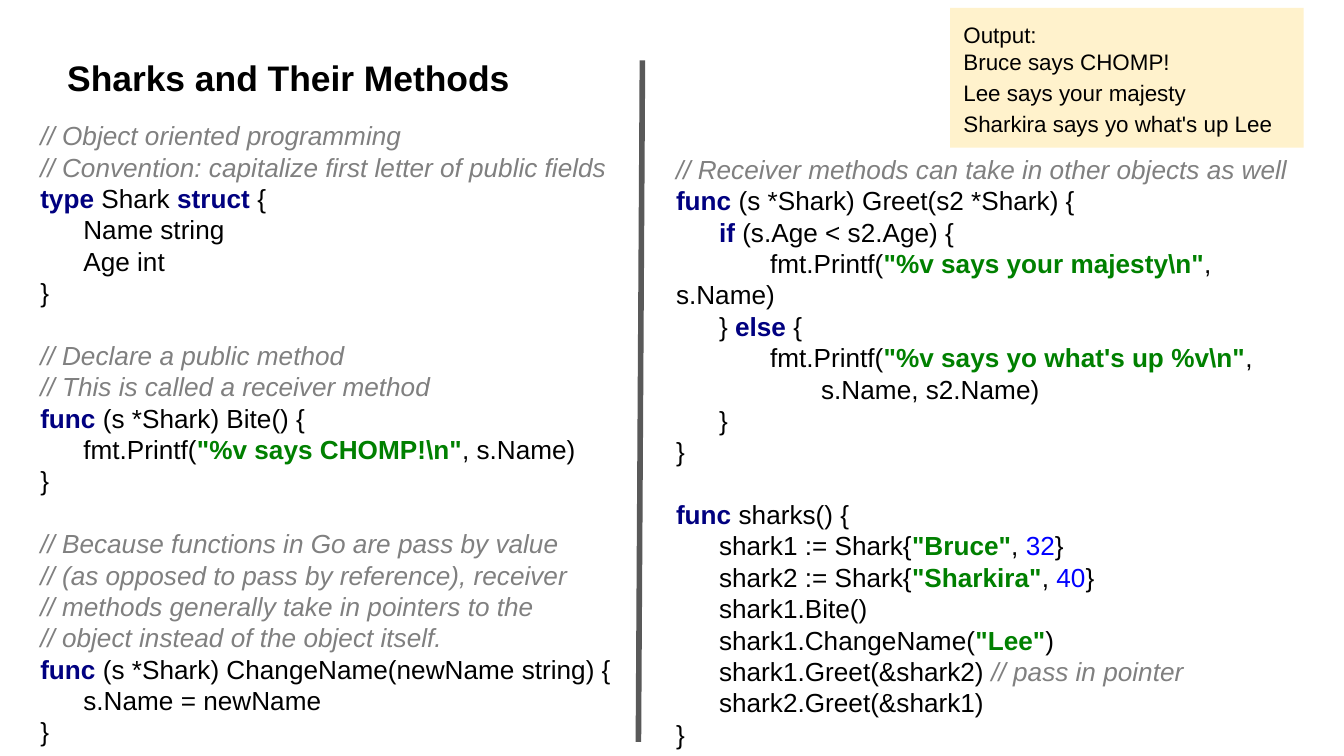
"""Build a slide that explains receiver methods on a Shark struct in Go."""

from typing import NamedTuple

from lxml import etree
from pptx import Presentation
from pptx.dml.color import RGBColor
from pptx.enum.shapes import MSO_CONNECTOR, MSO_SHAPE
from pptx.enum.text import MSO_ANCHOR, MSO_AUTO_SIZE, PP_ALIGN
from pptx.oxml.ns import qn
from pptx.util import Inches, Pt

STRAIGHT = MSO_CONNECTOR.STRAIGHT
RECTANGLE = MSO_SHAPE.RECTANGLE
TOP = MSO_ANCHOR.TOP
NO_AUTOFIT = MSO_AUTO_SIZE.NONE
LEFT = PP_ALIGN.LEFT

COLORS = {
    "text": "000000",
    "comment": "808080",
    "keyword": "000080",
    "string": "008000",
    "number": "0000FF",
    "divider": "595959",
    "output": "FFF2CC",
}
BOLD_STYLES = {"keyword", "string", "title"}
INDENTS = (0, 0.32, 0.7, 1.08)
SLIDE_WIDTH = 10
SLIDE_HEIGHT = SLIDE_WIDTH * 9 / 16
CODE_SIZE = 14
GAP = 16.8


class Run(NamedTuple):
    """A piece of text in one style."""

    text: str
    style: str = "text"


class Line(NamedTuple):
    """One paragraph with its indent depth and the space around it."""

    runs: list[Run]
    depth: int = 0
    space_before: float = 0
    line_spacing: float = 1.0


class Box(NamedTuple):
    """A position and size in inches."""

    left: float
    top: float
    width: float
    height: float


def plain(text: str, depth: int = 0, **spacing: float) -> Line:
    """Return a line of unstyled text."""
    return Line([Run(text)], depth, **spacing)


def comment(text: str, space_before: float = 0) -> Line:
    """Return a comment line."""
    return Line([Run(f"// {text}", "comment")], 0, space_before)


def function(signature: str, space_before: float = 0) -> Line:
    """Return the opening line of a function."""
    return Line([Run("func ", "keyword"), Run(signature)], 0, space_before)


def call(before: str, quoted: str, after: str, depth: int = 1) -> Line:
    """Return a code line with a quoted string in it."""
    return Line([Run(before), Run(f'"{quoted}"', "string"), Run(after)], depth)


def shark(variable: str, name: str, age: int) -> Line:
    """Return the line that creates one shark."""
    start = call(f"{variable} := Shark{{", name, ", ")
    return Line(start.runs + [Run(str(age), "number"), Run("}")], 1)


LEFT_CODE = [
    comment("Object oriented programming"),
    comment("Convention: capitalize first letter of public fields"),
    Line([Run("type ", "keyword"), Run("Shark "), Run("struct ", "keyword"), Run("{")]),
    plain("Name string", 1),
    plain("Age int", 1),
    plain("}"),
    comment("Declare a public method", GAP),
    comment("This is called a receiver method"),
    function("(s *Shark) Bite() {"),
    call("fmt.Printf(", "%v says CHOMP!\\n", ", s.Name)"),
    plain("}"),
    comment("Because functions in Go are pass by value", GAP),
    comment("(as opposed to pass by reference), receiver"),
    comment("methods generally take in pointers to the"),
    comment("object instead of the object itself."),
    function("(s *Shark) ChangeName(newName string) {"),
    plain("s.Name = newName", 1),
    plain("}"),
]
RIGHT_CODE = [
    comment("Receiver methods can take in other objects as well"),
    function("(s *Shark) Greet(s2 *Shark) {"),
    Line([Run("if ", "keyword"), Run("(s.Age < s2.Age) {")], 1),
    call("fmt.Printf(", "%v says your majesty\\n", ", s.Name)", 2),
    Line([Run("} "), Run("else ", "keyword"), Run("{")], 1),
    call("fmt.Printf(", "%v says yo what's up %v\\n", ",", 2),
    plain("s.Name, s2.Name)", 3),
    plain("}", 1),
    plain("}"),
    function("sharks() {", GAP),
    shark("shark1", "Bruce", 32),
    shark("shark2", "Sharkira", 40),
    plain("shark1.Bite()", 1),
    call("shark1.ChangeName(", "Lee", ")"),
    Line([Run("shark1.Greet(&shark2) "), Run("// pass in pointer", "comment")], 1),
    plain("shark2.Greet(&shark1)", 1),
    plain("}"),
]
OUTPUT = [
    plain("Output:"),
    plain("Bruce says CHOMP!"),
    plain("Lee says your majesty", line_spacing=1.15),
    plain("Sharkira says yo what's up Lee", line_spacing=1.15),
]


def place(shape, box: Box) -> None:
    """Move and size a shape."""
    shape.left, shape.top, shape.width, shape.height = map(Inches, box)


def add_run(paragraph, text: str, *, size: float, style: str) -> None:
    """Add formatted text to a paragraph."""
    run = paragraph.add_run()
    run.text = text
    font = run.font
    font.name, font.size = "Arial", Pt(size)
    font.bold = style in BOLD_STYLES
    font.italic = style == "comment"
    font.color.rgb = RGBColor.from_string(COLORS.get(style, COLORS["text"]))


def write_lines(shape, lines: list[Line], *, size: float) -> None:
    """Fill a shape with left-aligned lines without bullets."""
    frame = shape.text_frame
    frame.word_wrap = True
    frame.auto_size = NO_AUTOFIT
    frame.vertical_anchor = TOP
    frame.margin_left = frame.margin_right = Inches(0.1)
    frame.margin_top = frame.margin_bottom = Inches(0.1)
    for index, line in enumerate(lines):
        paragraph = frame.add_paragraph() if index else frame.paragraphs[0]
        paragraph.alignment = LEFT
        paragraph.space_before = Pt(line.space_before)
        paragraph.space_after = Pt(0)
        paragraph.line_spacing = line.line_spacing
        properties = paragraph._p.get_or_add_pPr()
        properties.set("marL", "0")
        properties.set("indent", str(Inches(INDENTS[line.depth])))
        etree.SubElement(properties, qn("a:buNone"))
        for run in line.runs:
            add_run(paragraph, run.text, size=size, style=run.style)


def add_divider(slide) -> None:
    """Draw the line between the two code columns."""
    ends = map(Inches, (4.78, 0.45, 4.75, 5.52))
    divider = slide.shapes.add_connector(STRAIGHT, *ends)
    divider.line.color.rgb = RGBColor.from_string(COLORS["divider"])
    divider.line.width = Pt(3)
    etree.SubElement(divider._element.spPr, qn("a:effectLst"))


def add_output(slide) -> None:
    """Draw the box that holds the program output."""
    box = Box(7.07, 0.06, 2.63, 1.04)
    shape = slide.shapes.add_shape(RECTANGLE, *map(Inches, box))
    shape.shadow.inherit = False
    shape.fill.solid()
    shape.fill.fore_color.rgb = RGBColor.from_string(COLORS["output"])
    shape.line.fill.background()
    write_lines(shape, OUTPUT, size=12)


def main() -> None:
    """Build and save the presentation."""
    presentation = Presentation()
    presentation.slide_width = Inches(SLIDE_WIDTH)
    presentation.slide_height = Inches(SLIDE_HEIGHT)
    slide = presentation.slides.add_slide(presentation.slide_layouts[3])
    title, left_code, right_code = slide.placeholders
    place(title, Box(0.4, 0.32, 8.11, 0.52))
    write_lines(title, [Line([Run("Sharks and Their Methods", "title")])], size=19)
    place(left_code, Box(0.2, 0.79, 4.86, 4.84))
    write_lines(left_code, LEFT_CODE, size=CODE_SIZE)
    place(right_code, Box(4.93, 1.04, 4.93, 4.58))
    write_lines(right_code, RIGHT_CODE, size=CODE_SIZE)
    add_divider(slide)
    add_output(slide)
    presentation.save("out.pptx")


if __name__ == "__main__":
    main()
